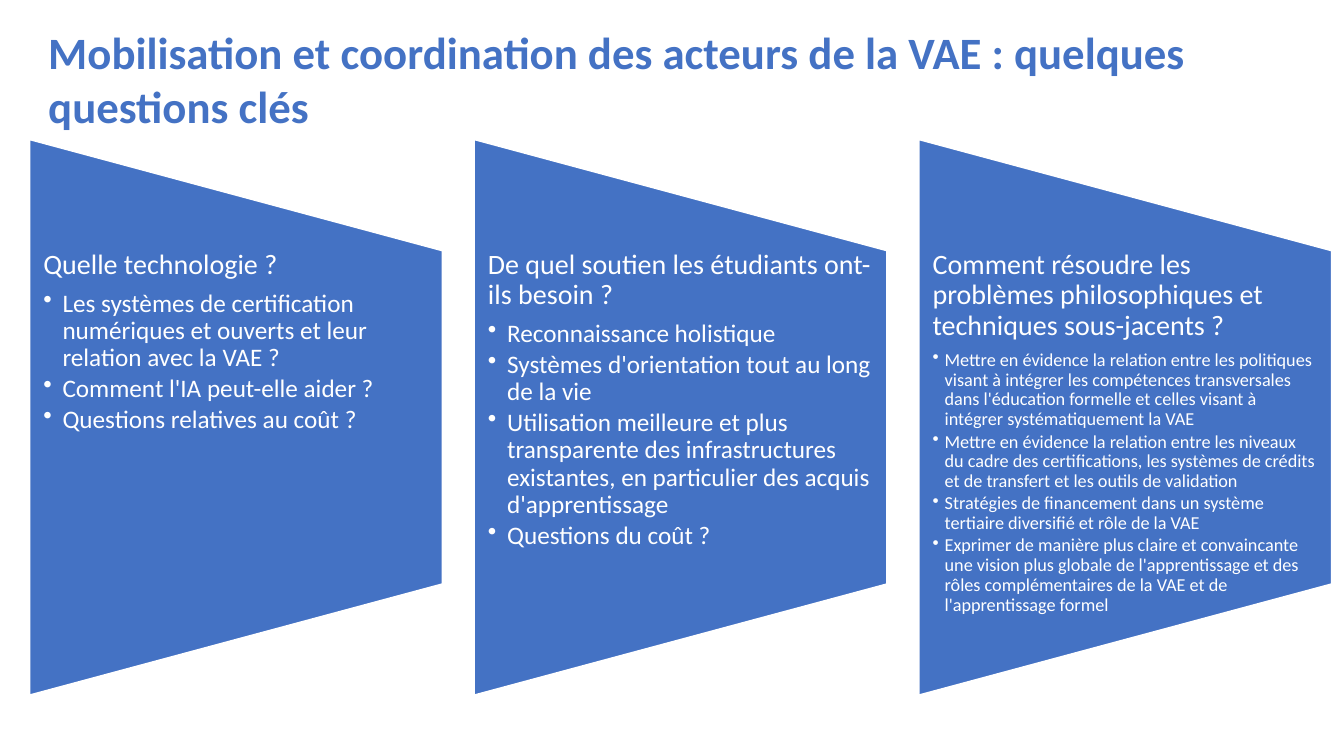
from pptx import Presentation
from pptx.dml.color import RGBColor
from pptx.enum.shapes import MSO_SHAPE as Shape
from pptx.enum.text import MSO_ANCHOR as Anchor
from pptx.oxml.ns import qn
from pptx.util import Inches, Pt
from lxml.etree import SubElement

BLUE = RGBColor(0x44, 0x72, 0xC4)
WHITE = RGBColor(0xFF, 0xFF, 0xFF)
FONT = "Calibri"

# Column grid, in inches
GRID_LEFT, GRID_TOP = 0.29, 1.38
COLUMN_PITCH = 4.41
PANEL_WIDTH, PANEL_HEIGHT = 4.1, 5.52
SLOPE_SHARE = 1 / 5  # part of the panel height lost to each slanted edge

TITLE = "Mobilisation et coordination des acteurs de la VAE : quelques questions clés"

# Heading, bullet size, bullet indent, bullets
QUESTIONS = [
    ("Quelle technologie ?", 18, 0.19, [
        "Les systèmes de certification numériques et ouverts et leur relation avec la VAE ?",
        "Comment l'IA peut-elle aider ?",
        "Questions relatives au coût ?",
    ]),
    ("De quel soutien les étudiants ont-ils besoin ?", 18, 0.19, [
        "Reconnaissance holistique",
        "Systèmes d'orientation tout au long de la vie",
        "Utilisation meilleure et plus transparente des infrastructures existantes, "
        "en particulier des acquis d'apprentissage",
        "Questions du coût ?",
    ]),
    ("Comment résoudre les problèmes philosophiques et techniques sous-jacents ?", 13, 0.12, [
        "Mettre en évidence la relation entre les politiques visant à intégrer les compétences "
        "transversales dans l'éducation formelle et celles visant à intégrer systématiquement la VAE",
        "Mettre en évidence la relation entre les niveaux du cadre des certifications, "
        "les systèmes de crédits et de transfert et les outils de validation",
        "Stratégies de financement dans un système tertiaire diversifié et rôle de la VAE",
        "Exprimer de manière plus claire et convaincante une vision plus globale de l'apprentissage "
        "et des rôles complémentaires de la VAE et de l'apprentissage formel",
    ]),
]


def add_frame(slide, left, top, width, height, side_inset=0.1, end_inset=0.05):
    box = slide.shapes.add_textbox(Inches(left), Inches(top), Inches(width), Inches(height))
    frame = box.text_frame
    frame.word_wrap = True
    frame.vertical_anchor = Anchor.TOP
    frame.margin_left = frame.margin_right = Inches(side_inset)
    frame.margin_top = frame.margin_bottom = Inches(end_inset)
    return frame


def write(paragraph, text, size, color=WHITE, bold=False, spacing=1.0, after=0, indent=None):
    """Fill one paragraph; an indent turns it into a bullet."""
    if indent is not None:
        paragraph.level = 1
        properties = paragraph._p.get_or_add_pPr()
        properties.set("marL", str(Inches(indent)))
        properties.set("indent", str(-Inches(indent)))
        SubElement(properties, qn("a:buChar")).set("char", "•")
    paragraph.line_spacing = spacing
    paragraph.space_after = Pt(after)
    run = paragraph.add_run()
    run.text = text
    run.font.name = FONT
    run.font.size = Pt(size)
    run.font.bold = bold
    run.font.color.rgb = color


def add_panel(slide, left):
    """Trapezoid turned a quarter left, so its wide side faces left."""
    turn_shift = (PANEL_HEIGHT - PANEL_WIDTH) / 2
    panel = slide.shapes.add_shape(
        Shape.FLOWCHART_MANUAL_OPERATION,
        Inches(left - turn_shift), Inches(GRID_TOP + turn_shift),
        Inches(PANEL_HEIGHT), Inches(PANEL_WIDTH))
    panel.rotation = 270
    panel.shadow.inherit = False
    panel.fill.solid()
    panel.fill.fore_color.rgb = BLUE
    panel.line.color.rgb = WHITE
    panel.line.width = Pt(1.5)


def add_question(slide, column, heading, bullet_size, indent, bullets):
    left = GRID_LEFT + column * COLUMN_PITCH
    add_panel(slide, left)
    frame = add_frame(slide, left, GRID_TOP + SLOPE_SHARE * PANEL_HEIGHT, PANEL_WIDTH,
                      (1 - 2 * SLOPE_SHARE) * PANEL_HEIGHT, side_inset=0.14, end_inset=0)
    write(frame.paragraphs[0], heading, 20, spacing=0.9, after=7)
    for bullet in bullets:
        write(frame.add_paragraph(), bullet, bullet_size, spacing=0.9,
              after=round(0.15 * bullet_size, 2), indent=indent)


def main():
    deck = Presentation()
    deck.slide_width, deck.slide_height = Inches(13.33), Inches(7.5)
    slide = deck.slides.add_slide(deck.slide_layouts[6])

    # Three question panels
    for column, question in enumerate(QUESTIONS):
        add_question(slide, column, *question)

    # Title
    title = add_frame(slide, 0.38, 0.2, 13.05, 1.18)
    write(title.paragraphs[0], TITLE, 32, color=BLUE, bold=True)

    deck.save("out.pptx")


if __name__ == "__main__":
    main()
